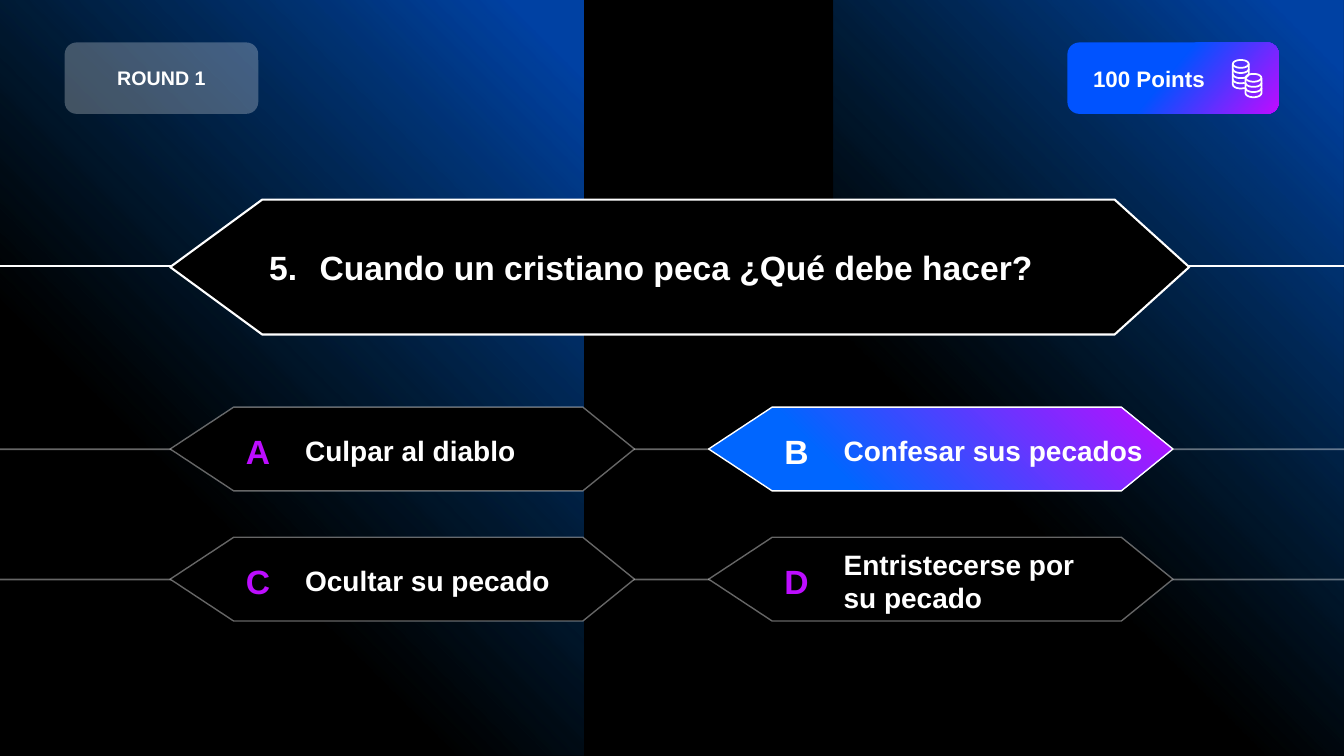
"""Build a quiz slide with one question, four answers and a points badge."""
import math
import pptx
import pptx.util
import pptx.oxml
import pptx.oxml.ns
import pptx.dml.color
import pptx.enum.shapes
import pptx.enum.text

Cm = pptx.util.Cm
Pt = pptx.util.Pt
RGBColor = pptx.dml.color.RGBColor
Kind = pptx.enum.shapes.MSO_SHAPE
Align = pptx.enum.text.PP_ALIGN
qn = pptx.oxml.ns.qn

BLACK = RGBColor(0x00, 0x00, 0x00)
WHITE = RGBColor(0xFF, 0xFF, 0xFF)
BLUE = RGBColor(0x00, 0x66, 0xFF)
ROYAL = RGBColor(0x00, 0x53, 0xFF)
TEAL = RGBColor(0x00, 0x70, 0xC0)
PURPLE = RGBColor(0xBD, 0x0D, 0xFF)

CORNER = ('<a:path path="circle"><a:fillToRect l="100000" b="100000"/></a:path>'
          '<a:tileRect t="-100000" r="-100000"/>')
SLANT = '<a:lin ang="2400000" scaled="0"/>'
GLOW = [(0, BLUE, 63), (6, BLUE, 63), (66, TEAL, 0), (100, BLACK, 0)]
PICK = [(0, PURPLE, 100), (73, BLUE, 100), (100, BLUE, 100)]
BADGE = [(0, ROYAL, 100), (47, ROYAL, 100), (99, PURPLE, 100), (100, PURPLE, 100)]


class Quiz:
    def __init__(self, deck, font):
        self.font = font
        self.slide = deck.slides.add_slide(deck.slide_layouts[5])
        self.shapes = self.slide.shapes
        self.slide.background.fill.solid()
        self.slide.background.fill.fore_color.rgb = BLACK

    def fade(self, node, alpha):
        color = node.find(".//" + qn("a:srgbClr"))
        color.append(pptx.oxml.parse_xml(
            f'<a:alpha {pptx.oxml.ns.nsdecls("a")} val="{alpha * 1000}"/>'))

    def paint(self, shape, color, alpha=100):
        shape.shadow.inherit = False
        shape.line.fill.background()
        shape.fill.solid()
        shape.fill.fore_color.rgb = color
        if alpha < 100:
            self.fade(shape.element.spPr.find(qn("a:solidFill")), alpha)

    def blend(self, shape, stops, way):
        self.paint(shape, BLACK)
        marks = "".join(
            f'<a:gs pos="{pos * 1000}"><a:srgbClr val="{color}">'
            f'<a:alpha val="{alpha * 1000}"/></a:srgbClr></a:gs>'
            for pos, color, alpha in stops)
        props = shape.element.spPr
        props.replace(props.find(qn("a:solidFill")), pptx.oxml.parse_xml(
            f'<a:gradFill {pptx.oxml.ns.nsdecls("a")} rotWithShape="1">'
            f'<a:gsLst>{marks}</a:gsLst>{way}</a:gradFill>'))

    def stroke(self, shape, width, alpha=100):
        shape.line.width = Pt(width)
        shape.line.fill.solid()
        shape.line.color.rgb = WHITE
        if alpha < 100:
            self.fade(shape.element.spPr.find(qn("a:ln")), alpha)

    def letter(self, shape, text, size, color=WHITE, align=Align.LEFT):
        frame = shape.text_frame
        frame.text = text
        frame.word_wrap = True
        frame.auto_size = pptx.enum.text.MSO_AUTO_SIZE.NONE
        frame.vertical_anchor = pptx.enum.text.MSO_ANCHOR.MIDDLE
        para = frame.paragraphs[0]
        para.alignment = align
        for run in para.runs:
            run.font.name = self.font
            run.font.size = Pt(size)
            run.font.bold = True
            run.font.color.rgb = color

    def title(self, x, y, w, h, text):
        box = self.shapes.title
        box.left, box.top, box.width, box.height = Cm(x), Cm(y), Cm(w), Cm(h)
        self.letter(box, text, 24)
        self.shapes.element.append(box.element)

    def label(self, x, y, w, h, text, size, color=WHITE, align=Align.LEFT):
        box = self.shapes.add_textbox(Cm(x), Cm(y), Cm(w), Cm(h))
        self.letter(box, text, size, color, align)

    def block(self, kind, x, y, w, h):
        return self.shapes.add_shape(kind, Cm(x), Cm(y), Cm(w), Cm(h))

    def panel(self, x, w, flip=False):
        shape = self.block(Kind.RECTANGLE, x, 0, w, 19.05)
        self.blend(shape, GLOW, CORNER)
        if flip:
            shape.element.spPr.find(qn("a:xfrm")).set("flipH", "1")

    def rule(self, y, width, alpha=100):
        line = self.shapes.add_connector(
            pptx.enum.shapes.MSO_CONNECTOR.STRAIGHT, 0, Cm(y), Cm(33.87), Cm(y))
        self.stroke(line, width, alpha)
        line.element.spPr.append(pptx.oxml.parse_xml(
            f'<a:effectLst {pptx.oxml.ns.nsdecls("a")}/>'))

    def gem(self, x, y, w, h, left, right):
        mid = y + h / 2
        dots = [(x + left, y), (x + w - right, y), (x + w, mid),
                (x + w - right, y + h), (x + left, y + h)]
        pen = self.shapes.build_freeform(Cm(x), Cm(mid))
        pen.add_line_segments([(Cm(a), Cm(b)) for a, b in dots])
        shape = pen.convert_to_shape()
        self.paint(shape, BLACK)
        return shape

    def answer(self, x, y, mark, text, wide, right=False):
        shape = self.gem(x, y, 11.7, 2.11, 1.6, 1.3)
        if right:
            self.blend(shape, PICK, CORNER)
        self.stroke(shape, 1, 100 if right else 40)
        self.label(x + 3.15, y + 0.08, wide, 2.03, text, 20)
        self.label(x + 1.55, y + 0.08, 1.32, 2.03, mark, 24,
                   WHITE if right else PURPLE, Align.CENTER)

    def coins(self, stacks):
        rx, ry, step = 0.2, 0.1, 0.13
        arcs = []
        for x, top, ends in stacks:
            arcs.append([(x, top, a) for a in range(0, 361, 20)])
            for turn, end in enumerate(ends, 1):
                arcs.append([(x, top + turn * step, a) for a in range(180, end - 1, -20)])
        lines = []
        for arc in arcs:
            dots = [(Cm(x + rx * math.cos(math.radians(a))),
                     Cm(y + ry * math.sin(math.radians(a)))) for x, y, a in arc]
            if len(arc) < 19:
                dots.insert(0, (dots[0][0], dots[0][1] - Cm(step)))
                if arc[-1][2] == 0:
                    dots.append((dots[-1][0], dots[-1][1] - Cm(step)))
            lines.append(dots)
        pen = self.shapes.build_freeform(*lines[0][0])
        for dots in lines:
            pen.move_to(*dots[0])
            pen.add_line_segments(dots[1:], close=False)
        shape = pen.convert_to_shape()
        shape.shadow.inherit = False
        shape.fill.background()
        self.stroke(shape, 1.25)

    def badge(self, x, w, text, size, align):
        shape = self.block(Kind.ROUNDED_RECTANGLE, x, 1.07, w, 1.8)
        self.paint(shape, WHITE, 26)
        self.letter(shape, text, size, WHITE, align)
        return shape


def main():
    deck = pptx.Presentation()
    deck.slide_width, deck.slide_height = Cm(33.87), Cm(19.05)
    quiz = Quiz(deck, "Arial")

    quiz.panel(0, 14.71, flip=True)
    quiz.panel(21.01, 12.86)

    quiz.rule(6.71, 1.5)
    quiz.stroke(quiz.gem(4.29, 5.03, 25.68, 3.4, 2.32, 1.88), 1.5)
    quiz.title(6.53, 5.05, 21.39, 3.38, "5.\tCuando un cristiano peca ¿Qué debe hacer?")

    rows = [
        [("A", "Culpar al diablo", 7.37), ("B", "Confesar sus pecados", 8.56, True)],
        [("C", "Ocultar su pecado", 7.9), ("D", "Entristecerse por su pecado", 7.04)],
    ]
    for row, pair in enumerate(rows):
        y = 10.26 + row * 3.28
        quiz.rule(y + 1.06, 1.25, 40)
        for col, item in enumerate(pair):
            quiz.answer(4.29 + col * 13.57, y, *item)

    points = quiz.badge(26.9, 5.33, "100 Points", 16, Align.LEFT)
    quiz.blend(points, BADGE, SLANT)
    points.text_frame.margin_left = Cm(0.56)
    quiz.coins([(31.27, 1.61, [0, 0, 60, 60]), (31.59, 1.96, [0, 0, 0])])
    quiz.badge(1.63, 4.88, "ROUND 1", 14, Align.CENTER)
    deck.save("out.pptx")


if __name__ == "__main__":
    main()
